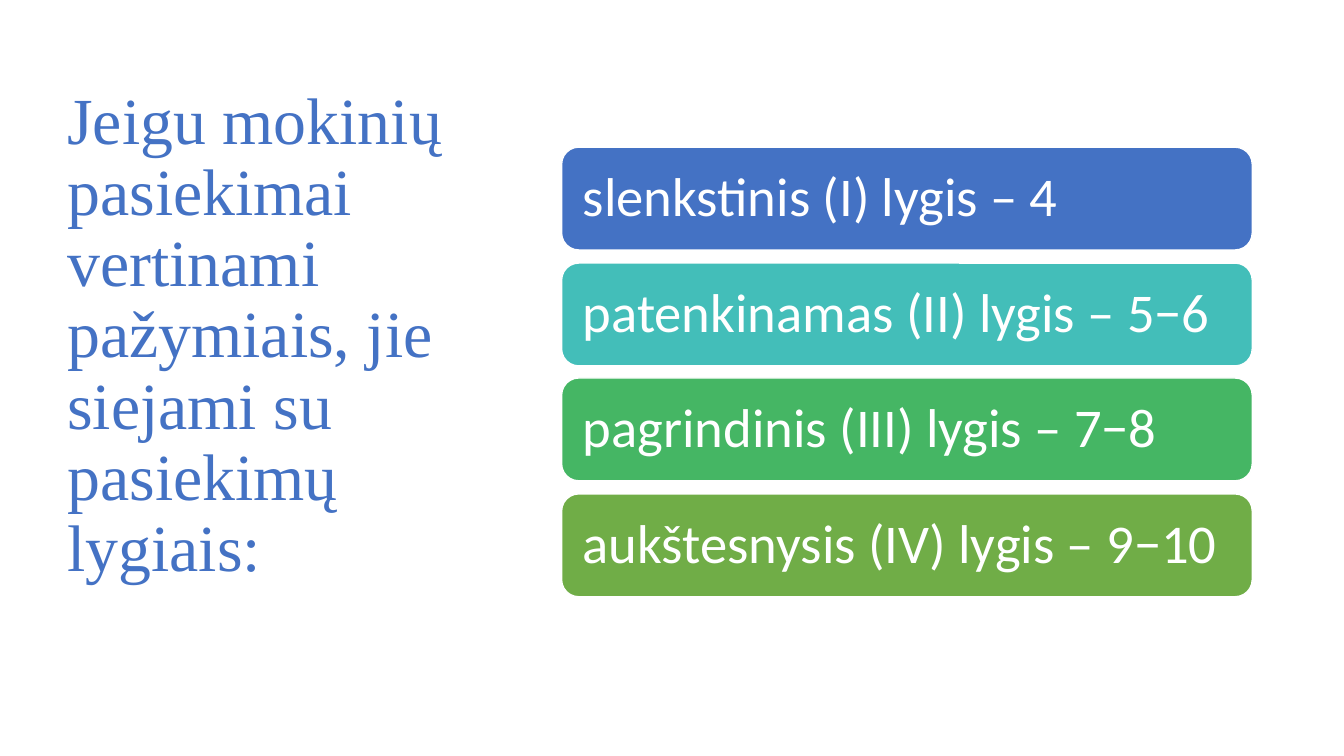
from dataclasses import dataclass

from pptx import Presentation
from pptx.dml.color import RGBColor
from pptx.enum.shapes import MSO_SHAPE
from pptx.enum.text import MSO_ANCHOR, PP_ALIGN
from pptx.util import Inches, Pt


@dataclass(frozen=True)
class Theme:
    """Colours, fonts and type sizes of the slide."""
    title_color: str = "4472C4"
    white: str = "FFFFFF"
    title_font: str = "Times New Roman"
    level_font: str = "Calibri"
    title_size: int = 47
    level_size: int = 39


THEME = Theme()
TITLE = "Jeigu mokinių pasiekimai vertinami pažymiais, jie siejami su pasiekimų lygiais:"
LEVELS = [
    ("slenkstinis (I) lygis – 4", "4472C4"),
    ("patenkinamas (II) lygis – 5−6", "43BEB9"),
    ("pagrindinis (III) lygis – 7−8", "45B664"),
    ("aukštesnysis (IV) lygis – 9−10", "70AD47"),
]
LEVEL_TOP = 1.46
LEVEL_PITCH = 1.147


def write_text(shape, text, font_name, size, color):
    """Write one left-aligned paragraph, centred vertically in the shape."""
    frame = shape.text_frame
    frame.word_wrap = True
    frame.vertical_anchor = MSO_ANCHOR.MIDDLE
    paragraph = frame.paragraphs[0]
    paragraph.alignment = PP_ALIGN.LEFT
    paragraph.line_spacing = 0.9
    run = paragraph.add_run()
    run.text = text
    run.font.name = font_name
    run.font.size = Pt(size)
    run.font.color.rgb = RGBColor.from_string(color)


def add_title(slide):
    """Add the heading on the left, raised by a deep bottom margin."""
    shape = slide.shapes.add_textbox(Inches(0.57), Inches(0.68), Inches(4.16), Inches(6.02))
    shape.text_frame.margin_bottom = Inches(0.75)
    write_text(shape, TITLE, THEME.title_font, THEME.title_size, THEME.title_color)


def add_level(slide, top, text, color):
    """Add one rounded bar naming an achievement level."""
    shape = slide.shapes.add_shape(
        MSO_SHAPE.ROUNDED_RECTANGLE, Inches(5.57), Inches(top), Inches(6.85), Inches(1.02))
    shape.shadow.inherit = False
    shape.fill.solid()
    shape.fill.fore_color.rgb = RGBColor.from_string(color)
    shape.line.color.rgb = RGBColor.from_string(THEME.white)
    shape.line.width = Pt(1)
    frame = shape.text_frame
    frame.margin_left = frame.margin_right = Inches(0.16)
    write_text(shape, text, THEME.level_font, THEME.level_size, THEME.white)


def main():
    """Build and save the slide."""
    presentation = Presentation()
    presentation.slide_width = Inches(13.33)
    presentation.slide_height = Inches(7.5)
    slide = presentation.slides.add_slide(presentation.slide_layouts[6])
    add_title(slide)
    for index, (text, color) in enumerate(LEVELS):
        add_level(slide, round(LEVEL_TOP + index * LEVEL_PITCH, 2), text, color)
    presentation.save("out.pptx")


if __name__ == "__main__":
    main()
